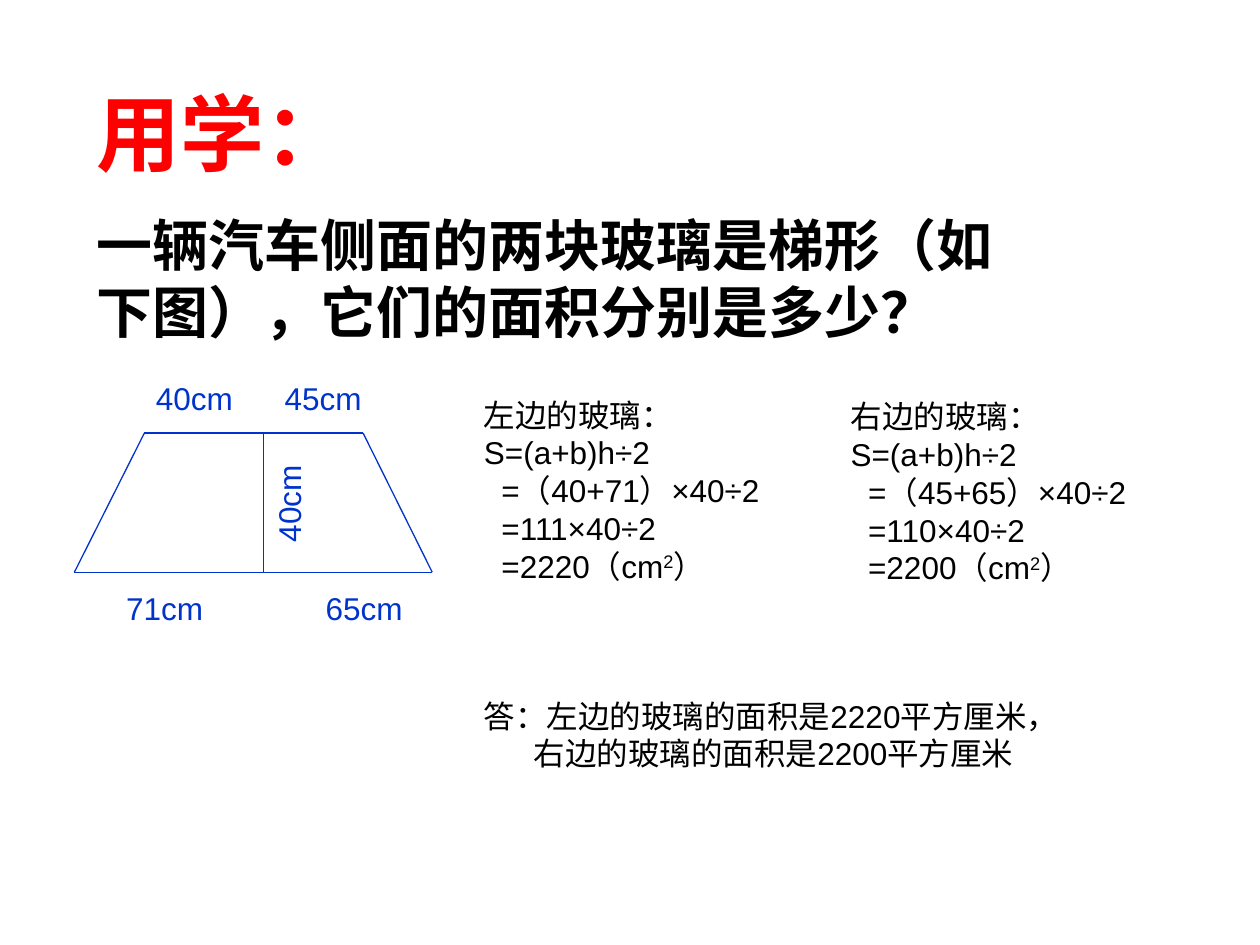
from lxml import etree
from pptx import Presentation
from pptx.dml.color import RGBColor
from pptx.enum.shapes import MSO_CONNECTOR as Connector
from pptx.enum.text import MSO_AUTO_SIZE as AutoSize
from pptx.oxml.ns import qn
from pptx.util import Pt

RED = RGBColor(0xFF, 0x00, 0x00)
BLUE = RGBColor(0x00, 0x33, 0xCC)
BLACK = RGBColor(0x00, 0x00, 0x00)
FONT = "Arial"


def add_box(page, left, top, width, height, wrap=True):
    box = page.shapes.add_textbox(Pt(left), Pt(top), Pt(width), Pt(height))
    box.text_frame.word_wrap = wrap
    box.text_frame.auto_size = AutoSize.SHAPE_TO_FIT_TEXT
    return box


def add_para(box, text, size=18, color=BLACK, bold=False, indent=0):
    """Fill the next paragraph; a ² in the text becomes a raised 2."""
    frame = box.text_frame
    para = frame.paragraphs[0] if not frame.text else frame.add_paragraph()
    para.font.name, para.font.size = FONT, Pt(size)
    para.font.bold = bold
    para.font.color.rgb = color
    if indent:
        properties = para._p.get_or_add_pPr()
        properties.set("marL", str(Pt(indent)))
        properties.set("indent", "0")
    before, square, after = text.partition("²")
    para.add_run().text = before
    if square:
        span = para.add_run()
        span.text = "2"
        span._r.get_or_add_rPr().set("baseline", "30000")
        para.add_run().text = after
    return para


def add_question(page, left, top, width, height):
    box = add_box(page, left, top, width, height)
    add_para(box, "用学：", 48, RED, bold=True)
    question = add_para(
        box, "一辆汽车侧面的两块玻璃是梯形（如下图），它们的面积分别是多少？",
        32, bold=True)
    question.space_before = Pt(16)


def add_line(page, start, end):
    line = page.shapes.add_connector(
        Connector.STRAIGHT, *(Pt(value) for value in (*start, *end)))
    line.line.color.rgb = BLUE
    line.line.width = Pt(0.75)
    etree.SubElement(line._element.spPr, qn("a:effectLst"))


def add_label(page, text, left, top, rotation=0):
    box = add_box(page, left, top, 71, 29)
    box.rotation = rotation
    add_para(box, text, color=BLUE)


def add_windows(page, left, top, width, height):
    middle, bottom = left + 108, top + height
    # Each pane: slanted outer side, top, base and the shared divider
    for upper, lower in ((left + 40, left), (left + 165, left + width)):
        corners = [(middle, top), (upper, top), (lower, bottom), (middle, bottom)]
        for start, end in zip(corners, corners[1:] + corners[:1]):
            add_line(page, start, end)
    # Lengths of the sides and the height
    for text, offset in (("40cm", 39.5), ("45cm", 113)):
        add_label(page, text, left + offset, top - 34.5)
    for text, offset in (("71cm", 22.5), ("65cm", 136.5)):
        add_label(page, text, left + offset, bottom + 6)
    add_label(page, "40cm", middle - 21, top + 19.5, rotation=270)


def add_solution(page, left, top, width, height, name, sides, total, area):
    box = add_box(page, left, top, width, height)
    add_para(box, f"{name}边的玻璃：")
    add_para(box, "S=(a+b)h÷2")
    for step in (f"=（{sides}）×40÷2", f"={total}×40÷2", f"={area}（cm²）"):
        add_para(box, step, indent=10)


def add_answer(page, left, top, width, height):
    box = add_box(page, left, top, width, height, wrap=False)
    add_para(box, "答：左边的玻璃的面积是2220平方厘米，")
    add_para(box, "右边的玻璃的面积是2200平方厘米", indent=28.5)


def main():
    deck = Presentation()
    deck.slide_width, deck.slide_height = Pt(720), Pt(540)
    page = deck.slides.add_slide(deck.slide_layouts[6])
    add_question(page, 48, 43, 556, 160.5)
    add_windows(page, 42.5, 247.5, 204.5, 79.5)
    add_solution(page, 269.5, 222.5, 199, 116, "左", "40+71", 111, 2220)
    add_solution(page, 479, 223.5, 199, 116, "右", "45+65", 110, 2200)
    add_answer(page, 269.5, 394.5, 345.5, 51)
    deck.save("out.pptx")


if __name__ == "__main__":
    main()
